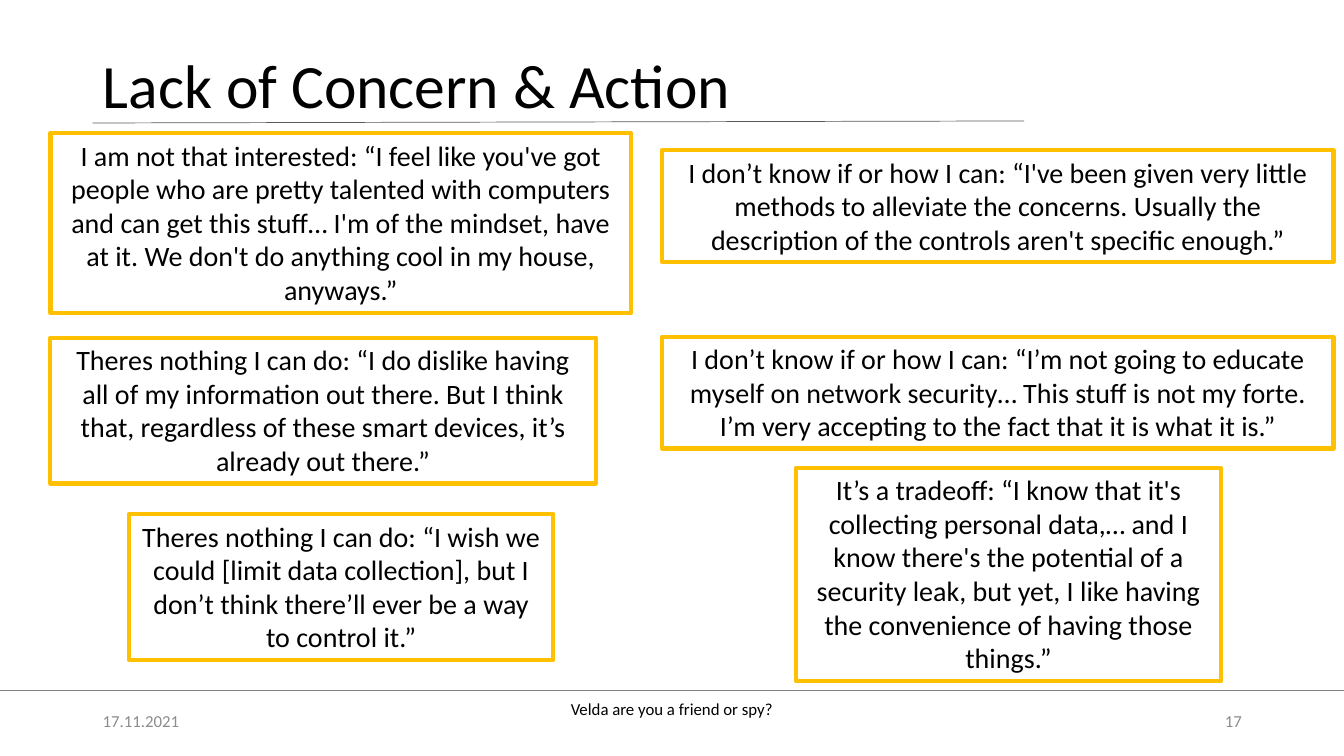
from dataclasses import dataclass

from lxml.etree import SubElement
from pptx import Presentation
from pptx.dml.color import RGBColor
from pptx.enum.shapes import MSO_CONNECTOR
from pptx.enum.text import MSO_ANCHOR, MSO_AUTO_SIZE, PP_ALIGN
from pptx.oxml.ns import qn
from pptx.slide import Slide
from pptx.text.text import TextFrame
from pptx.util import Inches, Length, Pt

BLACK = RGBColor(0x00, 0x00, 0x00)
GREY = RGBColor(0x8C, 0x8C, 0x8C)
DARK = RGBColor(0x59, 0x59, 0x59)
MID = RGBColor(0x80, 0x80, 0x80)
GOLD = RGBColor(0xFF, 0xC0, 0x00)

WIDE, HIGH = 13.33, 7.5


@dataclass(frozen=True)
class Box:
    """Left, top, width and height in percent of the slide."""
    left: float
    top: float
    width: float
    height: float


@dataclass(frozen=True)
class Quote:
    """A framed quote; its height follows from the number of lines."""
    left: float
    top: float
    width: float
    lines: int
    text: str

    def box(self) -> Box:
        return Box(self.left, self.top, self.width, 1.33 + 4.49 * self.lines)


@dataclass(frozen=True)
class Note:
    box: Box
    text: str
    color: RGBColor
    align: PP_ALIGN
    anchor: MSO_ANCHOR
    para: dict


@dataclass(frozen=True)
class Rule:
    start: tuple[float, float]
    end: tuple[float, float]
    color: RGBColor


TITLE = Box(6.9, 2, 86.25, 19.33)
TIGHT = {"line_spacing": 0.9}

QUOTES = [
    Quote(3.75, 17.6, 43.2, 5,
          "I am not that interested: “I feel like you've got people who are pretty "
          "talented with computers and can get this stuff… I'm of the mindset, have "
          "at it. We don't do anything cool in my house, anyways.”"),
    Quote(49.28, 19.87, 49.95, 3,
          "I don’t know if or how I can: “I've been given very little methods to "
          "alleviate the concerns. Usually the description of the controls aren't "
          "specific enough.”"),
    Quote(49.28, 44.53, 49.95, 3,
          "I don’t know if or how I can: “I’m not going to educate myself on network "
          "security… This stuff is not my forte. I’m very accepting to the fact that "
          "it is what it is.”"),
    Quote(3.75, 44.67, 40.58, 4,
          "Theres nothing I can do: “I do dislike having all of my information out "
          "there. But I think that, regardless of these smart devices, it’s already "
          "out there.”"),
    Quote(9.6, 68, 31.58, 4,
          "Theres nothing I can do: “I wish we could [limit data collection], but I "
          "don’t think there’ll ever be a way to control it.”"),
    Quote(59.25, 61.87, 31.58, 6,
          "It’s a tradeoff: “I know that it's collecting personal data,… and I know "
          "there's the potential of a security leak, but yet, I like having the "
          "convenience of having those things.”"),
]

NOTES = [
    Note(Box(34.65, 92.13, 30.68, 5.87), "Velda are you a friend or spy?", BLACK,
         PP_ALIGN.CENTER, MSO_ANCHOR.TOP, TIGHT | {"space_before": Pt(10)}),
    Note(Box(6.9, 92.67, 22.5, 5.33), "17.11.2021", GREY,
         PP_ALIGN.LEFT, MSO_ANCHOR.MIDDLE, {}),
    Note(Box(70.65, 92.67, 22.5, 5.33), "17", GREY,
         PP_ALIGN.RIGHT, MSO_ANCHOR.MIDDLE, {}),
]

RULES = [
    Rule((6.9, 16.27), (76.2, 16), DARK),
    Rule((0, 91.33), (100, 91.33), MID),
]


def across(share: float) -> Length:
    return Inches(WIDE * share / 100)


def down(share: float) -> Length:
    return Inches(HIGH * share / 100)


def place(box: Box) -> dict[str, Length]:
    return {"left": across(box.left), "top": down(box.top),
            "width": across(box.width), "height": down(box.height)}


def apply(target: object, values: dict) -> None:
    for name, value in values.items():
        setattr(target, name, value)


def write(frame: TextFrame, text: str, size: int, color: RGBColor,
          align: PP_ALIGN, anchor: MSO_ANCHOR, para: dict) -> None:
    apply(frame, {"text": text, "word_wrap": True,
                  "auto_size": MSO_AUTO_SIZE.NONE, "vertical_anchor": anchor})
    line = frame.paragraphs[0]
    apply(line, {"alignment": align} | para)
    font = line.runs[0].font
    apply(font, {"name": "Calibri", "size": Pt(size)})
    font.color.rgb = color


def add_note(slide: Slide, note: Note) -> None:
    shape = slide.shapes.add_textbox(**place(note.box))
    write(shape.text_frame, note.text, 12, note.color, note.align,
          note.anchor, note.para)


def add_quote(slide: Slide, quote: Quote) -> None:
    shape = slide.shapes.add_textbox(**place(quote.box()))
    write(shape.text_frame, quote.text, 20, BLACK, PP_ALIGN.CENTER,
          MSO_ANCHOR.TOP, {})
    shape.text_frame.auto_size = MSO_AUTO_SIZE.SHAPE_TO_FIT_TEXT
    shape.line.color.rgb = GOLD
    shape.line.width = Pt(3)


def add_rule(slide: Slide, rule: Rule) -> None:
    (x1, y1), (x2, y2) = rule.start, rule.end
    line = slide.shapes.add_connector(
        MSO_CONNECTOR.STRAIGHT, across(x1), down(y1), across(x2), down(y2))
    line.line.color.rgb = rule.color
    line.line.width = Pt(0.5)
    SubElement(line._element.spPr, qn("a:effectLst"))


def main() -> None:
    deck = Presentation()
    apply(deck, {"slide_width": Inches(WIDE), "slide_height": Inches(HIGH)})
    slide = deck.slides.add_slide(deck.slide_layouts[5])

    # Title
    title = slide.shapes.title
    apply(title, place(TITLE))
    write(title.text_frame, "Lack of Concern & Action", 44, BLACK,
          PP_ALIGN.LEFT, MSO_ANCHOR.MIDDLE, TIGHT)

    # Footer texts and thin rules
    for note in NOTES:
        add_note(slide, note)
    for rule in RULES:
        add_rule(slide, rule)

    # Framed quotes
    for quote in QUOTES:
        add_quote(slide, quote)

    deck.save("out.pptx")


if __name__ == "__main__":
    main()
